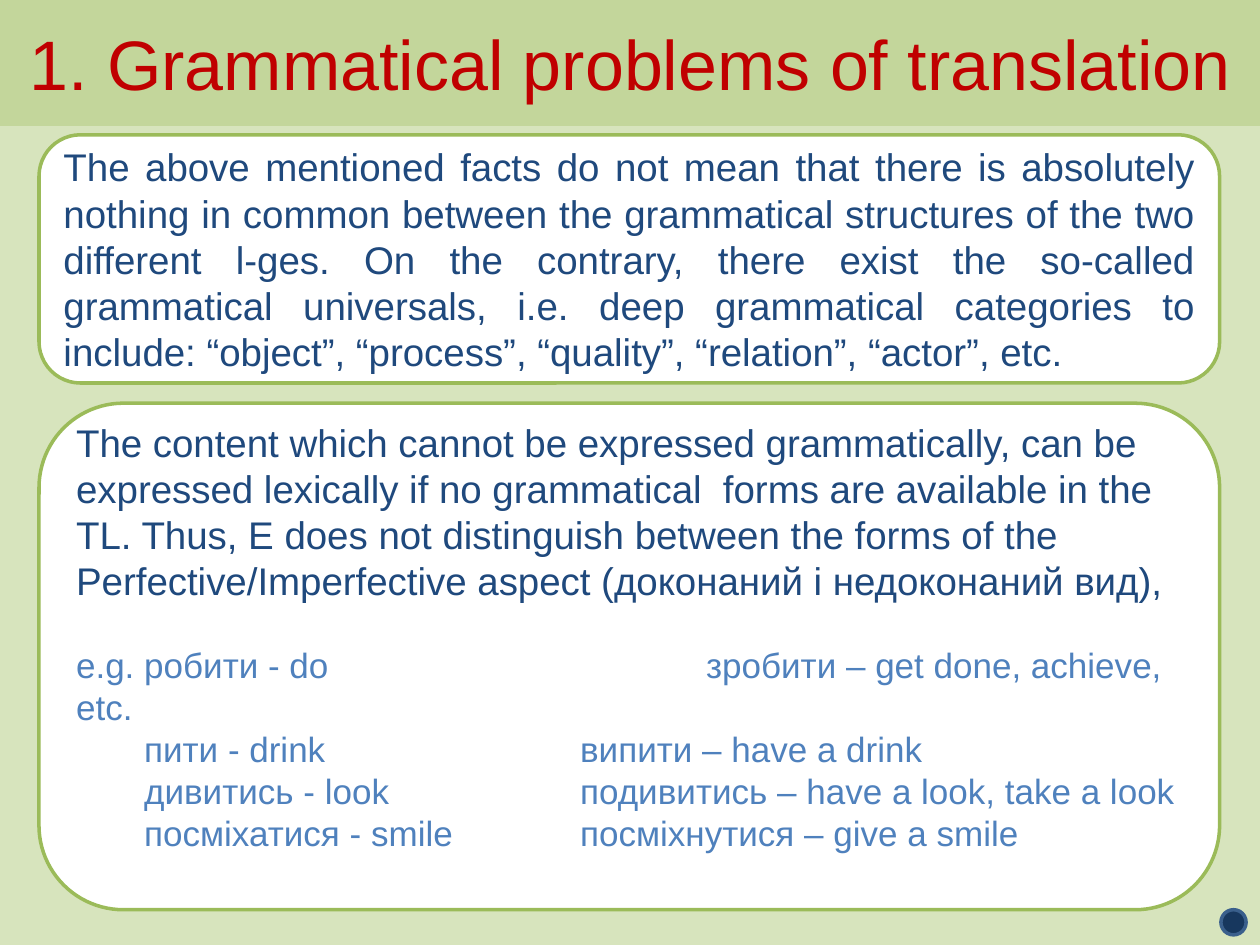
import dataclasses
import typing

import pptx
import pptx.dml.color
import pptx.enum.shapes
import pptx.enum.text
import pptx.oxml
import pptx.oxml.ns
import pptx.util

COLS, ROWS = 100, 75
HUES = {
    "page": "D7E4BD", "band": "C3D69B", "title": "C00000", "card": "FFFFFF",
    "edge": "9BBB59", "text": "1F497D", "sample": "4F81BD",
    "dot": "17375E", "ring": "3A5F8C",
}
KIND = pptx.enum.shapes.MSO_SHAPE
ALIGN = pptx.enum.text.PP_ALIGN
FRAME = {
    "word_wrap": True,
    "auto_size": pptx.enum.text.MSO_AUTO_SIZE.NONE,
    "vertical_anchor": pptx.enum.text.MSO_ANCHOR.MIDDLE,
    "margin_left": pptx.util.Inches(0.1),
    "margin_right": pptx.util.Inches(0.1),
    "margin_top": pptx.util.Inches(0.05),
    "margin_bottom": pptx.util.Inches(0.05),
}


@dataclasses.dataclass
class Para:
    text: str
    size: int = 20
    hue: str = "sample"
    align: typing.Any = ALIGN.LEFT
    before: int = 0
    tabs: tuple = ()


@dataclasses.dataclass
class Box:
    col: float
    row: float
    wide: float
    high: float
    fill: str
    line: str
    kind: typing.Any = KIND.ROUNDED_RECTANGLE
    paras: tuple = ()
    foot: float = 0.05


INTRO = (
    "The above mentioned facts do not mean that there is absolutely nothing in common "
    "between the grammatical structures of the two different l-ges. On the contrary, "
    "there exist the so-called grammatical universals, i.e. deep grammatical categories "
    "to include: “object”, “process”, “quality”, “relation”, “actor”, etc."
)
ASPECT = (
    "The content which cannot be expressed grammatically, can be expressed lexically "
    "if no grammatical  forms are available in the TL. Thus, E does not distinguish "
    "between the forms of the Perfective/Imperfective aspect "
    "(доконаний і недоконаний вид),"
)
PAIRS = (
    ("пити - drink", "випити – have a drink"),
    ("дивитись - look", "подивитись – have a look, take a look"),
    ("посміхатися - smile", "посміхнутися – give a smile"),
)
HEAD = Box(0, 0, 100, 9.9, "band", "band", paras=(
    Para("1. Grammatical problems of translation", 40, "title", ALIGN.CENTER),))
BOXES = (
    Box(3.1, 10.7, 93.7, 19.7, "card", "edge",
        paras=(Para(INTRO, 22, "text", ALIGN.JUSTIFY),)),
    Box(96.9, 72.2, 2, 2, "dot", "ring", KIND.OVAL),
    Box(3.1, 32, 93.7, 40.2, "card", "edge", foot=0.37, paras=(
        Para(ASPECT, 22, "text"),
        Para("e.g. робити - do\tзробити – get done, achieve, etc.", before=23, tabs=(5,)),
        *(Para(f"\t{base}\t{done}", tabs=(0.54, 4)) for base, done in PAIRS),
    )),
)


def tint(name: str) -> pptx.dml.color.RGBColor:
    return pptx.dml.color.RGBColor.from_string(HUES[name])


def apply(item: typing.Any, values: dict) -> None:
    for name, value in values.items():
        setattr(item, name, value)


def place(box: Box, deck: typing.Any) -> dict:
    x, y = deck.slide_width / COLS, deck.slide_height / ROWS
    return {"left": round(box.col * x), "top": round(box.row * y),
            "width": round(box.wide * x), "height": round(box.high * y)}


def write(para: Para, item: typing.Any) -> None:
    apply(item, {"alignment": para.align, "space_before": pptx.util.Pt(para.before)})
    if para.tabs:
        props = item._p.get_or_add_pPr()
        stops = pptx.oxml.parse_xml(f"<a:tabLst {pptx.oxml.ns.nsdecls('a')}/>")
        for stop in para.tabs:
            node = stops.makeelement(pptx.oxml.ns.qn("a:tab"), {
                "pos": str(pptx.util.Inches(stop)), "algn": "l"})
            stops.append(node)
        props.append(stops)
    run = item.add_run()
    run.text = para.text
    apply(run.font, {"name": "Arial", "size": pptx.util.Pt(para.size)})
    run.font.color.rgb = tint(para.hue)


def style(shape: typing.Any, box: Box) -> None:
    shape.fill.solid()
    shape.fill.fore_color.rgb = tint(box.fill)
    shape.line.color.rgb = tint(box.line)
    shape.line.width = pptx.util.Pt(2)
    frame = shape.text_frame
    apply(frame, {**FRAME, "margin_bottom": pptx.util.Inches(box.foot)})
    for i, para in enumerate(box.paras):
        write(para, frame.add_paragraph() if i else frame.paragraphs[0])


def main() -> None:
    deck = pptx.Presentation()
    apply(deck, {"slide_width": pptx.util.Inches(10),
                 "slide_height": pptx.util.Inches(7.5)})
    slide = deck.slides.add_slide(deck.slide_layouts.get_by_name("Title Only"))
    slide.background.fill.solid()
    slide.background.fill.fore_color.rgb = tint("page")
    title = slide.shapes.title
    apply(title, place(HEAD, deck))
    style(title, HEAD)
    for box in BOXES:
        shape = slide.shapes.add_shape(box.kind, **place(box, deck))
        shape.shadow.inherit = False
        style(shape, box)
    deck.save("out.pptx")


if __name__ == "__main__":
    main()
